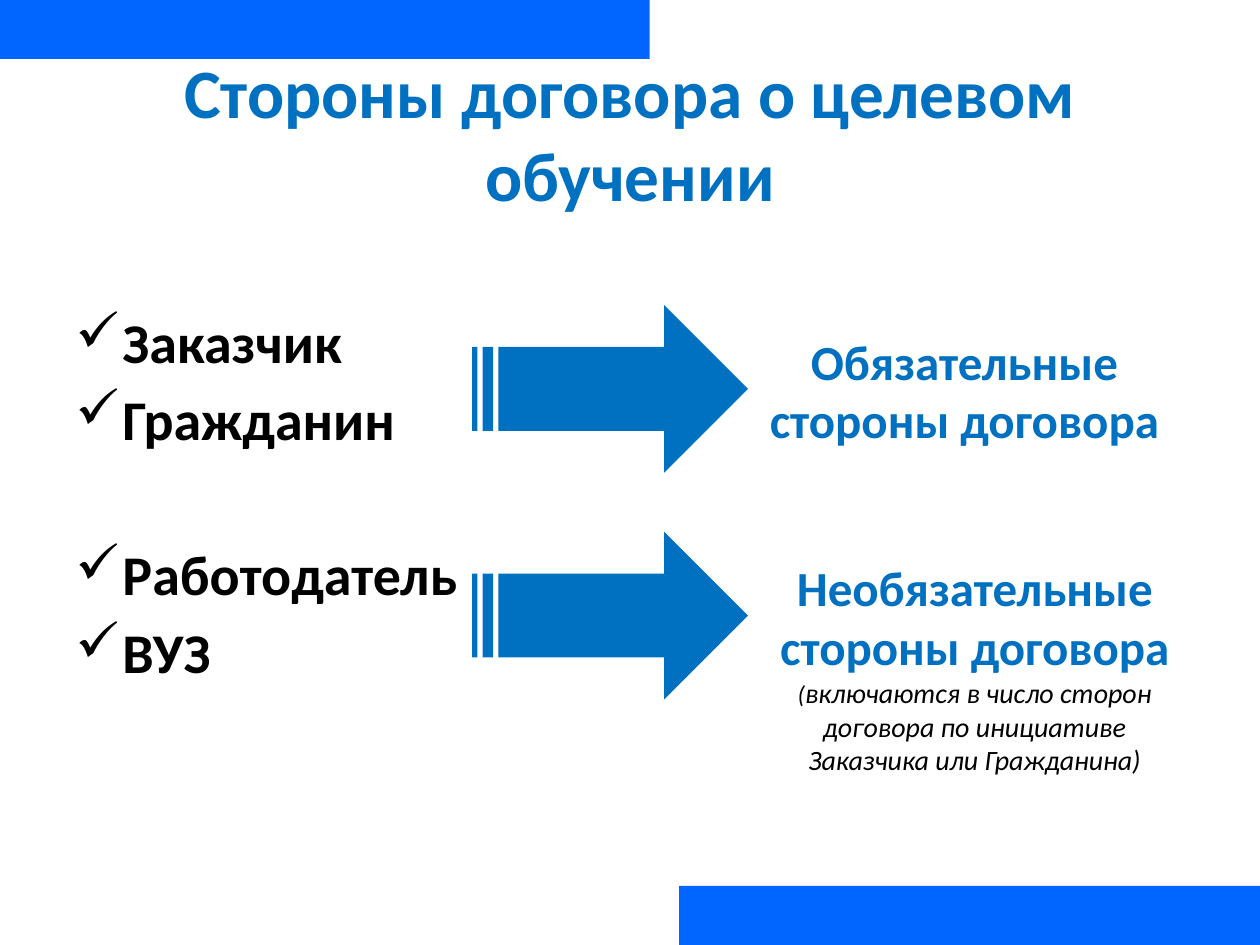
from pptx import Presentation
from pptx import util as u
from pptx.dml.color import RGBColor
from pptx.enum import shapes, text
from pptx.oxml import parse_xml
from pptx.oxml.ns import nsdecls

BLUE, BAND, BLACK = "0070C0", "0066FF", "000000"


def add_block(shape_kind, left, top, width, height, color):
    block = slide.shapes.add_shape(
        shape_kind, u.Cm(left), u.Cm(top), u.Cm(width), u.Cm(height))
    block.shadow.inherit = False
    block.fill.solid()
    block.fill.fore_color.rgb = RGBColor.from_string(color)
    block.line.fill.background()


def add_text(left, top, width, height, lines, size, color, align):
    frame = slide.shapes.add_textbox(
        u.Cm(left), u.Cm(top), u.Cm(width), u.Cm(height)).text_frame
    frame.word_wrap = True
    frame.text = "\n".join(lines)
    for paragraph in frame.paragraphs:
        paragraph.alignment = align
        paragraph.font.name = "Calibri"
        paragraph.font.size = u.Pt(size)
        paragraph.font.bold = True
        paragraph.font.color.rgb = RGBColor.from_string(color)
    return frame


prs = Presentation()
prs.slide_width, prs.slide_height = u.Cm(25.4), u.Cm(19.05)
slide = prs.slides.add_slide(prs.slide_layouts[6])
center, left_align = text.PP_ALIGN.CENTER, text.PP_ALIGN.LEFT

# Title
title = add_text(1.27, 1.4, 22.86, 2.54, ["Стороны договора о целевом обучении"],
                 39.6, BLUE, center)
title.vertical_anchor = text.MSO_ANCHOR.MIDDLE

# Parties, in two groups of two
parties = add_text(1.27, 6.07, 22.86, 11,
                   ["Заказчик", "Гражданин", "Работодатель", "ВУЗ"],
                   32, BLACK, left_align)
for party, gap in zip(parties.paragraphs, (5.7, 50.4, 5.7, 0)):
    party.space_after = u.Pt(gap)
    properties = party._p.get_or_add_pPr()
    properties.set("marL", str(u.Cm(0.95)))
    properties.set("indent", str(u.Cm(-0.95)))
    properties.append(parse_xml(f'<a:buChar {nsdecls("a")} char="✓"/>'))

# Bands at the top and bottom edges
add_block(shapes.MSO_SHAPE.RECTANGLE, 0, 0, 13.1, 1.19, BAND)
add_block(shapes.MSO_SHAPE.RECTANGLE, 13.69, 17.86, 11.71, 1.19, BAND)

# Arrows with the status of each group
for arrow_top, status_left, status_height, status in (
        (6.15, 14.88, 2.64, "Обязательные стороны договора"),
        (10.72, 15.09, 4.7, "Необязательные стороны договора")):
    add_block(shapes.MSO_SHAPE.STRIPED_RIGHT_ARROW,
              9.52, arrow_top, 5.56, 3.38, BLUE)
    status_text = add_text(status_left, arrow_top + 0.4, 9.12, status_height,
                           [status], 28, BLUE, center)

# Note under the optional parties
note = status_text.add_paragraph()
note.alignment = center
note.font.name = "Calibri"
note.font.italic = True
note.font.color.rgb = RGBColor.from_string(BLACK)
for words, size in (
        ("(", 14),
        ("включаются в число сторон договора по инициативе "
         "Заказчика или Гражданина)", 16)):
    run = note.add_run()
    run.text = words
    run.font.size = u.Pt(size)

prs.save("out.pptx")
